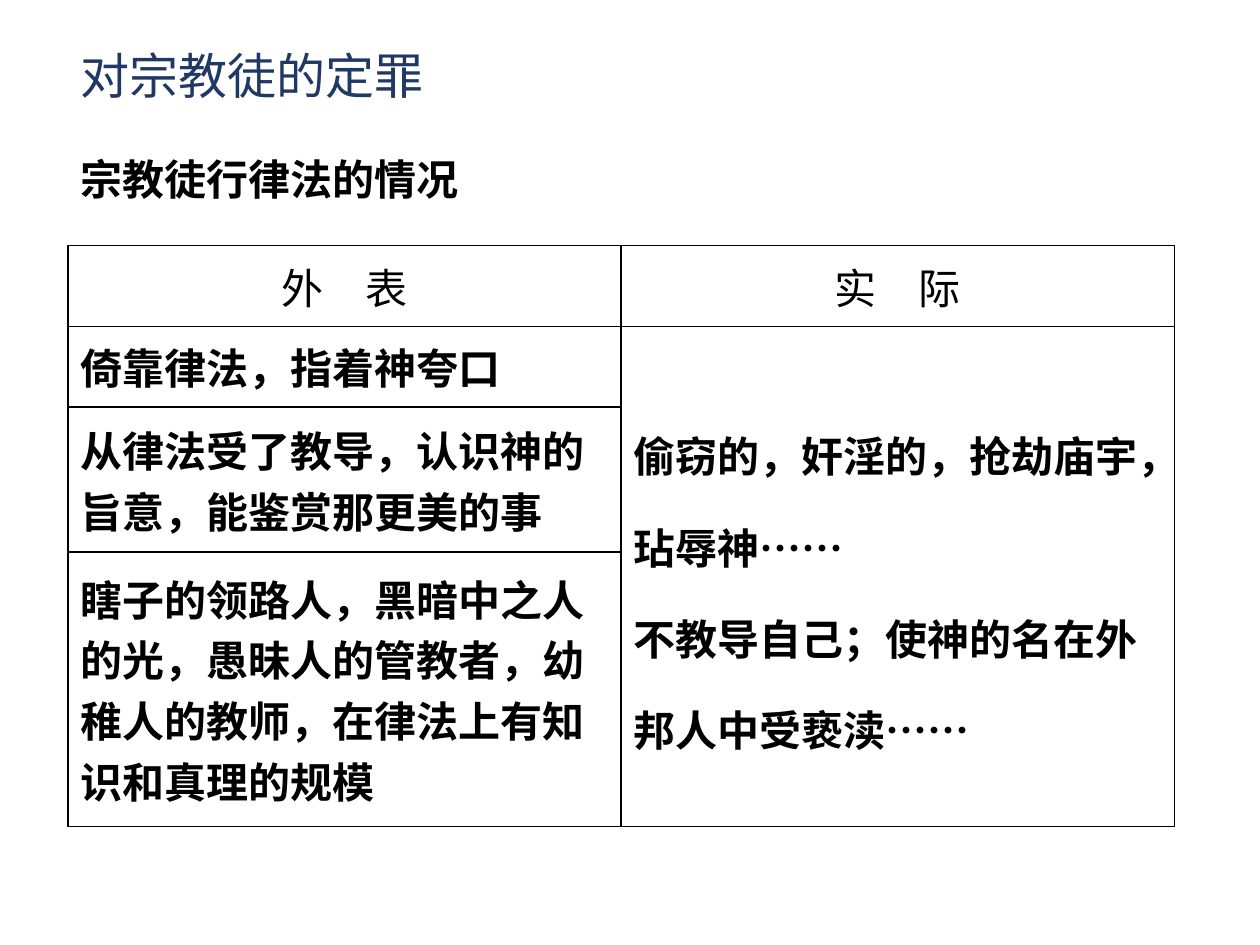
from dataclasses import dataclass

from lxml.etree import SubElement
from pptx import Presentation
from pptx.dml.color import RGBColor
from pptx.enum.lang import MSO_LANGUAGE_ID
from pptx.enum.text import MSO_ANCHOR, MSO_AUTO_SIZE, PP_ALIGN
from pptx.oxml.ns import qn
from pptx.util import Inches, Pt

COLORS = {"title": "203864", "ink": "000000"}
CJK_FONT = "Noto Sans CJK SC"
BODY_FONT = "Calibri"
LEFT = 0.54
COLUMN_WIDTH = 4.39
ROW_HEIGHTS = (0.64, 0.64, 1.15, 2.18)


@dataclass(frozen=True)
class Entry:
    row: int
    column: int
    paragraphs: tuple[str, ...]
    header: bool = False
    row_span: int = 1
    line_spacing: float = 1.0


ENTRIES = (
    Entry(0, 0, ("外　表",), header=True),
    Entry(0, 1, ("实　际",), header=True),
    Entry(1, 0, ("倚靠律法，指着神夸口",)),
    Entry(1, 1, ("偷窃的，奸淫的，抢劫庙宇，玷辱神……",
                 "不教导自己；使神的名在外邦人中受亵渎……"),
          row_span=3, line_spacing=1.5),
    Entry(2, 0, ("从律法受了教导，认识神的旨意，能鉴赏那更美的事",)),
    Entry(3, 0, ("瞎子的领路人，黑暗中之人的光，愚昧人的管教者，"
                 "幼稚人的教师，在律法上有知识和真理的规模",)),
)


def write(frame, paragraphs: tuple[str, ...], *, size: float = 24,
          font: str = BODY_FONT, color: str = "ink", bold: bool = False,
          align: PP_ALIGN = PP_ALIGN.LEFT, line_spacing: float = 1.0) -> None:
    for index, text in enumerate(paragraphs):
        paragraph = frame.add_paragraph() if index else frame.paragraphs[0]
        paragraph.alignment = align
        paragraph.line_spacing = line_spacing
        run = paragraph.add_run()
        run.text = text
        run.font.size = Pt(size)
        run.font.bold = bold
        run.font.name = font
        run.font.language_id = MSO_LANGUAGE_ID.SIMPLIFIED_CHINESE
        run.font.color.rgb = RGBColor.from_string(COLORS[color])
        SubElement(run.font._element, qn("a:ea"), typeface=CJK_FONT)


def place(shape, top: float, width: float, height: float) -> None:
    shape.left, shape.top = Inches(LEFT), Inches(top)
    shape.width, shape.height = Inches(width), Inches(height)


def outline(cell) -> None:
    """Give a cell four thin borders and no fill."""
    properties = cell._tc.get_or_add_tcPr()
    for side in ("lnL", "lnR", "lnT", "lnB"):
        line = SubElement(properties, qn(f"a:{side}"), w=str(Pt(1)))
        fill = SubElement(line, qn("a:solidFill"))
        SubElement(fill, qn("a:srgbClr"), val=COLORS["ink"])
    cell.fill.background()


def add_comparison(slide) -> None:
    table = slide.shapes.add_table(
        len(ROW_HEIGHTS), 2, Inches(LEFT), Inches(1.95),
        Inches(2 * COLUMN_WIDTH), Inches(sum(ROW_HEIGHTS))).table
    table.first_row = table.horz_banding = False
    for column in table.columns:
        column.width = Inches(COLUMN_WIDTH)
    for row, height in zip(table.rows, ROW_HEIGHTS):
        row.height = Inches(height)
    for cell in table.iter_cells():
        outline(cell)
    for entry in ENTRIES:
        cell = table.cell(entry.row, entry.column)
        if entry.row_span > 1:
            cell.merge(table.cell(entry.row + entry.row_span - 1, entry.column))
        cell.vertical_anchor = MSO_ANCHOR.MIDDLE
        write(cell.text_frame, entry.paragraphs, bold=not entry.header,
              font=CJK_FONT if entry.header else BODY_FONT,
              align=PP_ALIGN.CENTER if entry.header else PP_ALIGN.LEFT,
              line_spacing=entry.line_spacing)


def main() -> None:
    deck = Presentation()
    deck.slide_width, deck.slide_height = Inches(10), Inches(7.5)
    slide = deck.slides.add_slide(deck.slide_layouts[5])

    add_comparison(slide)

    subtitle = slide.shapes.add_textbox(0, 0, 0, 0)
    place(subtitle, 1.17, 3.74, 0.5)
    subtitle.text_frame.word_wrap = True
    write(subtitle.text_frame, ("宗教徒行律法的情况",), bold=True)

    title = slide.shapes.title
    place(title, 0.31, 2.92, 0.57)
    title.text_frame.word_wrap = False
    title.text_frame.vertical_anchor = MSO_ANCHOR.TOP
    write(title.text_frame, ("对宗教徒的定罪",), size=28, font=CJK_FONT,
          color="title")

    for heading in (title, subtitle):
        heading.text_frame.auto_size = MSO_AUTO_SIZE.SHAPE_TO_FIT_TEXT

    deck.save("out.pptx")


if __name__ == "__main__":
    main()
